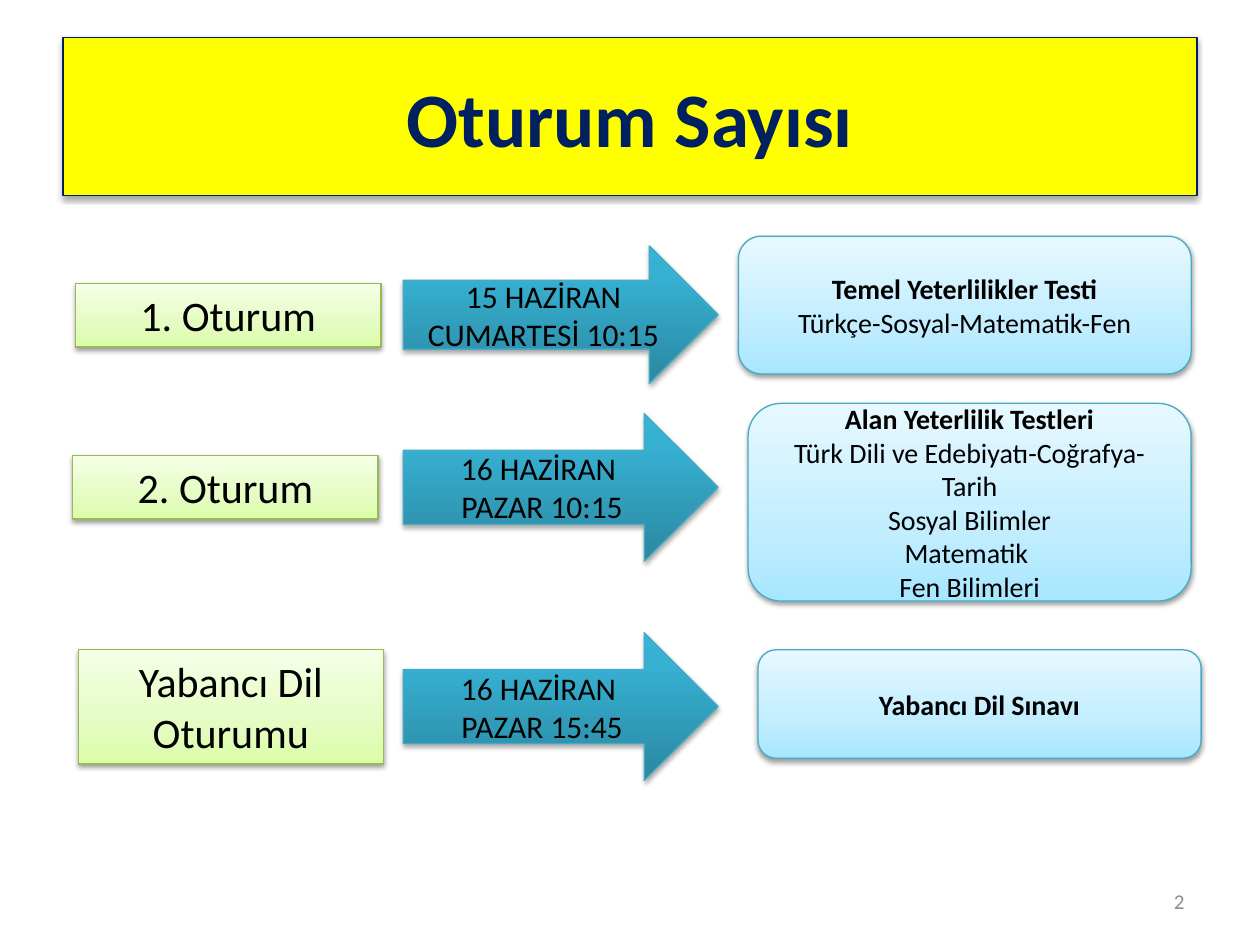
from lxml import etree
from pptx import Presentation
from pptx.dml.color import RGBColor
from pptx.enum.shapes import MSO_SHAPE
from pptx.enum.text import MSO_ANCHOR, MSO_AUTO_SIZE, PP_ALIGN
from pptx.oxml.ns import qn
from pptx.util import Pt

RECTANGLE = MSO_SHAPE.RECTANGLE
ROUNDED = MSO_SHAPE.ROUNDED_RECTANGLE
ARROW = MSO_SHAPE.RIGHT_ARROW
TOP, MIDDLE = MSO_ANCHOR.TOP, MSO_ANCHOR.MIDDLE
FIT_SHAPE = MSO_AUTO_SIZE.SHAPE_TO_FIT_TEXT
CENTER, RIGHT = PP_ALIGN.CENTER, PP_ALIGN.RIGHT

FONT = "Calibri"
BLACK = RGBColor(0x00, 0x00, 0x00)
GRAY = RGBColor(0x8C, 0x8C, 0x8C)
NAVY = RGBColor(0x00, 0x20, 0x60)
YELLOW = RGBColor(0xFF, 0xFF, 0x00)
GREEN_LINE = RGBColor(0x98, 0xB9, 0x55)
TEAL_LINE = RGBColor(0x46, 0xAA, 0xC5)

# Gradient stops from bottom to top: (percent, colour)
GREEN_STOPS = [(0, RGBColor(0xDA, 0xFD, 0xA7)), (35, RGBColor(0xE4, 0xFC, 0xC2)),
               (100, RGBColor(0xF5, 0xFF, 0xE7))]
TEAL_STOPS = [(0, RGBColor(0x2A, 0x88, 0xA2)), (80, RGBColor(0x37, 0xB1, 0xD2)),
              (100, RGBColor(0x34, 0xB4, 0xD6))]
SKY_STOPS = [(0, RGBColor(0xA7, 0xE6, 0xFF)), (35, RGBColor(0xC1, 0xED, 0xFF)),
             (100, RGBColor(0xE7, 0xF8, 0xFF))]


def add_xml(parent, tag, **attributes):
    return etree.SubElement(parent, qn(tag), {k: str(v) for k, v in attributes.items()})


class SlideBuilder:
    def __init__(self, slide):
        self.slide = slide

    def set_text(self, shape, lines, size, color=BLACK, align=CENTER, anchor=MIDDLE,
                 bold_first=False):
        frame = shape.text_frame
        frame.word_wrap = True
        frame.vertical_anchor = anchor
        frame.text = "\n".join(lines)
        for index, paragraph in enumerate(frame.paragraphs):
            paragraph.alignment = align
            for run in paragraph.runs:
                run.font.name = FONT
                run.font.size = Pt(size)
                run.font.color.rgb = color
                run.font.bold = bold_first and index == 0

    def box(self, kind, bounds, line_color, shadow_distance, shadow_alpha):
        shape = self.slide.shapes.add_shape(kind, *map(Pt, bounds))
        shape.line.color.rgb = line_color
        shape.line.width = Pt(0.75)
        shape.shadow.inherit = False
        effects = shape._element.spPr.find(qn("a:effectLst"))
        shadow = add_xml(effects, "a:outerShdw", blurRad=Pt(3.1), dist=Pt(shadow_distance),
                         dir=5400000, rotWithShape=0)
        color = add_xml(shadow, "a:srgbClr", val=BLACK)
        add_xml(color, "a:alpha", val=shadow_alpha * 1000)
        return shape

    def fill_gradient(self, shape, stops):
        """Fill with any number of stops, running from bottom to top."""
        shape.fill.gradient()
        gradient = shape._element.spPr.find(qn("a:gradFill"))
        for child in list(gradient):
            gradient.remove(child)
        stop_list = add_xml(gradient, "a:gsLst")
        for percent, color in stops:
            stop = add_xml(stop_list, "a:gs", pos=percent * 1000)
            add_xml(stop, "a:srgbClr", val=color)
        add_xml(gradient, "a:lin", ang=16200000, scaled=0)

    def title(self, bounds, text):
        shape = self.box(RECTANGLE, bounds, NAVY, 1.8, 35)
        shape.fill.solid()
        shape.fill.fore_color.rgb = YELLOW
        self.set_text(shape, [text], 44, NAVY, bold_first=True)

    def session(self, bounds, lines):
        shape = self.box(RECTANGLE, bounds, GREEN_LINE, 1.6, 38)
        self.fill_gradient(shape, GREEN_STOPS)
        self.set_text(shape, lines, 24, anchor=TOP)
        shape.text_frame.auto_size = FIT_SHAPE

    def date_arrow(self, bounds, lines):
        shape = self.box(ARROW, bounds, TEAL_LINE, 1.8, 35)
        self.fill_gradient(shape, TEAL_STOPS)
        self.set_text(shape, lines, 18)

    def test_card(self, bounds, lines):
        shape = self.box(ROUNDED, bounds, TEAL_LINE, 1.6, 38)
        self.fill_gradient(shape, SKY_STOPS)
        self.set_text(shape, lines, 16, bold_first=True)

    def page_number(self, bounds, number):
        shape = self.slide.shapes.add_textbox(*map(Pt, bounds))
        self.set_text(shape, [number], 12, GRAY, RIGHT)


# Each row: session, date and tests, every one with its bounds and lines
ROWS = [
    (((43.2, 162, 174.5, 36.3), ["1. Oturum"]),
     ((230.4, 140.5, 180, 78.7), ["15 HAZİRAN CUMARTESİ 10:15"]),
     ((422, 135, 258.7, 78.7), ["Temel Yeterlilikler Testi", "Türkçe-Sosyal-Matematik-Fen"])),
    (((41.6, 260.3, 174.5, 36.3), ["2. Oturum"]),
     ((230.4, 236.2, 180, 84.5), ["16 HAZİRAN ", "PAZAR 10:15"]),
     ((427.5, 230.5, 253.2, 113),
      ["Alan Yeterlilik Testleri", "Türk Dili ve Edebiyatı-Coğrafya-Tarih",
       "Sosyal Bilimler", "Matematik ", "Fen Bilimleri"])),
    (((44.7, 371.2, 174.5, 65.4), ["Yabancı Dil", "Oturumu"]),
     ((230.4, 361.5, 180, 84.5), ["16 HAZİRAN ", "PAZAR 15:45"]),
     ((433.2, 371.3, 253.2, 62), ["Yabancı Dil Sınavı"])),
]


def main():
    presentation = Presentation()
    presentation.slide_width, presentation.slide_height = Pt(720), Pt(540)
    builder = SlideBuilder(presentation.slides.add_slide(presentation.slide_layouts[6]))
    builder.title((36, 21.6, 648, 90), "Oturum Sayısı")
    for session, date, tests in ROWS:
        builder.session(*session)
        builder.date_arrow(*date)
        builder.test_card(*tests)
    builder.page_number((516, 500.5, 168, 28.75), "2")
    presentation.save("out.pptx")


if __name__ == "__main__":
    main()
